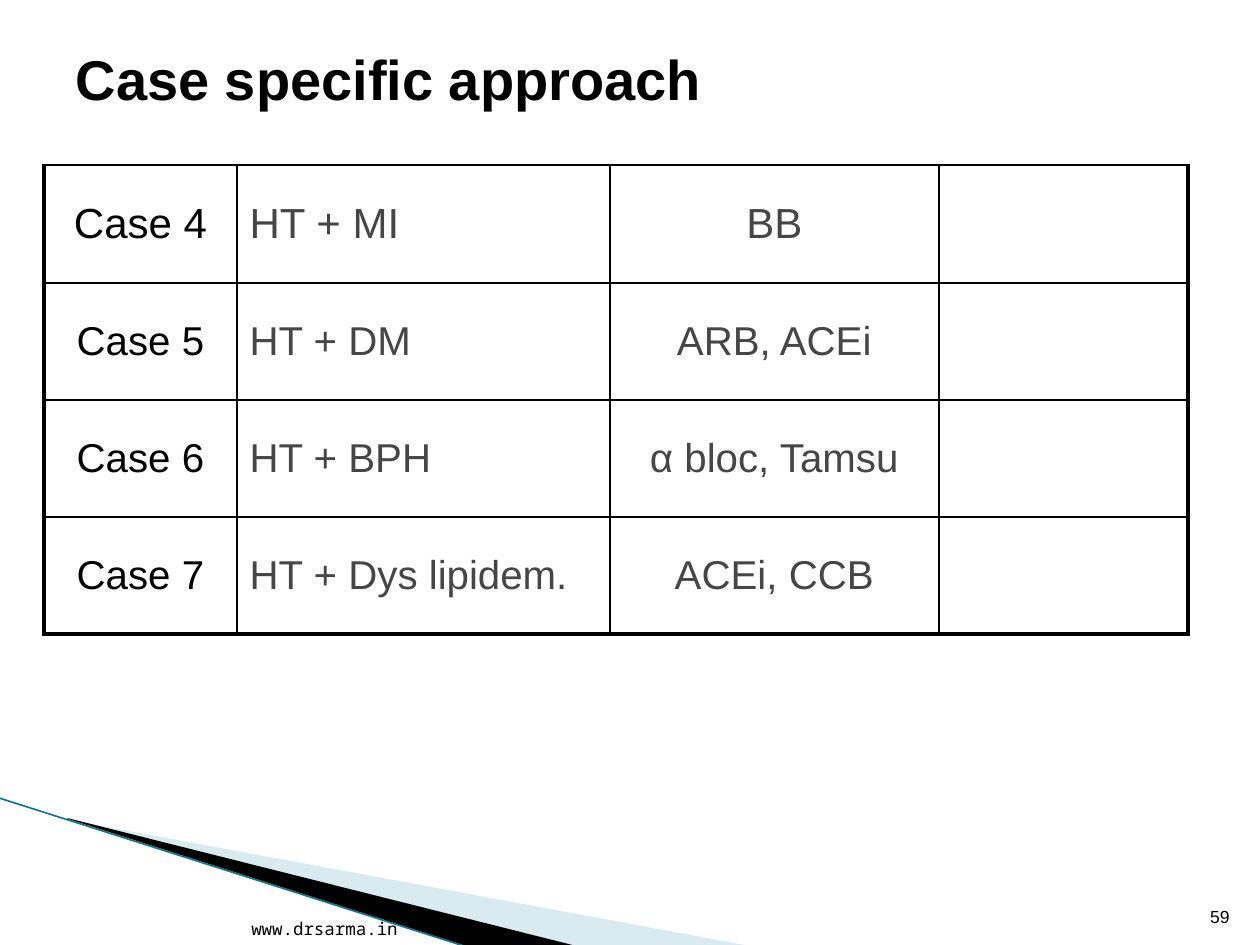
from lxml import etree
from pptx import Presentation
from pptx import util as u
from pptx.dml.color import RGBColor
from pptx.enum import shapes, text
from pptx.oxml import ns

SCALE = 914400 / 126  # EMU per px


def px(*lengths):
    return [u.Emu(round(n * SCALE)) for n in lengths]


def rgb(c):
    return RGBColor.from_string(c)


prs = Presentation()
prs.slide_width, prs.slide_height = px(1260, 945)
s = prs.slides.add_slide(prs.slide_layouts[5])

# Corner wedges and the line along their edge
wedges = [
    ("A0CBDC", 40, [(69, 820), (750, 946), (575, 946), (69, 819)]),
    ("000000", 100, [(67, 818), (576, 946), (469, 947), (68, 819)]),
]
for color, opacity, points in wedges:
    builder = s.shapes.build_freeform(*points[0], scale=SCALE)
    builder.add_line_segments(points[1:], close=True)
    sp = builder.convert_to_shape()
    sp.shadow.inherit = False
    sp.fill.solid()
    sp.fill.fore_color.rgb = rgb(color)
    sp.line.fill.background()
    if opacity < 100:
        clr = sp.fill._xPr.find(".//" + ns.qn("a:srgbClr"))
        etree.SubElement(clr, ns.qn("a:alpha"), val=str(opacity * 1000))

edge = s.shapes.add_connector(shapes.MSO_CONNECTOR.STRAIGHT, *px(-1, 798, 467, 947))
edge.line.color.rgb = rgb("1B7587")
edge.line.width = u.Pt(0.95)
etree.SubElement(edge._element.spPr, ns.qn("a:effectLst"))

# Footer and slide number
footers = [
    ("www.drsarma.in", "Noto Sans Mono", (10, 879, 400, 66)),
    ("59", "Arial", (1192, 883, 50, 50)),
]
for words, font, box in footers:
    sp = s.shapes.add_textbox(*px(*box))
    tf = sp.text_frame
    tf.word_wrap = True
    tf.vertical_anchor = text.MSO_ANCHOR.BOTTOM
    p = tf.paragraphs[0]
    p.text = words
    p.alignment = text.PP_ALIGN.RIGHT
    p.font.name, p.font.size = font, u.Pt(10)
    p.font.color.rgb = rgb("000000")

# Title
title = s.shapes.title
title.left, title.top, title.width, title.height = px(63, 38, 1134, 81)
tf = title.text_frame
tf.auto_size = text.MSO_AUTO_SIZE.NONE
tf.vertical_anchor = text.MSO_ANCHOR.MIDDLE
p = tf.paragraphs[0]
p.text = "Case specific approach"
p.alignment = text.PP_ALIGN.LEFT
p.font.name, p.font.size, p.font.bold = "Arial", u.Pt(32), True
p.font.color.rgb = rgb("000000")

# Case table
cases = [
    ("Case 4", "HT + MI", "BB", ""),
    ("Case 5", "HT + DM", "ARB, ACEi", ""),
    ("Case 6", "HT + BPH", "α bloc, Tamsu", ""),
    ("Case 7", "HT + Dys lipidem.", "ACEi, CCB", ""),
]
widths = [193, 373, 329, 249]
heights = [118, 117, 117, 117]
last_row, last_col = len(heights) - 1, len(widths) - 1
table = s.shapes.add_table(len(heights), len(widths),
                           *px(44, 165, sum(widths), sum(heights))).table
for col, width in zip(table.columns, px(*widths)):
    col.width = width
for row, height in zip(table.rows, px(*heights)):
    row.height = height

for i, case in enumerate(cases):
    for j, words in enumerate(case):
        cell = table.cell(i, j)
        cell.vertical_anchor = text.MSO_ANCHOR.MIDDLE
        p = cell.text_frame.paragraphs[0]
        p.text = words
        p.alignment = text.PP_ALIGN.LEFT if j == 1 else text.PP_ALIGN.CENTER
        p.font.name, p.font.size = "Arial", u.Pt(24 if i == 0 else 23)
        p.font.color.rgb = rgb("000000" if j == 0 else "464646")
        tcPr = cell._tc.get_or_add_tcPr()
        thick = {"L": j == 0, "R": j == last_col, "T": False, "B": i == last_row}
        for side, heavy in thick.items():
            ln = etree.SubElement(tcPr, ns.qn("a:ln" + side),
                                  w=str(u.Pt(2.25 if heavy else 1)))
            fill = etree.SubElement(ln, ns.qn("a:solidFill"))
            etree.SubElement(fill, ns.qn("a:srgbClr"), val="000000")
        cell.fill.background()

prs.save("out.pptx")
